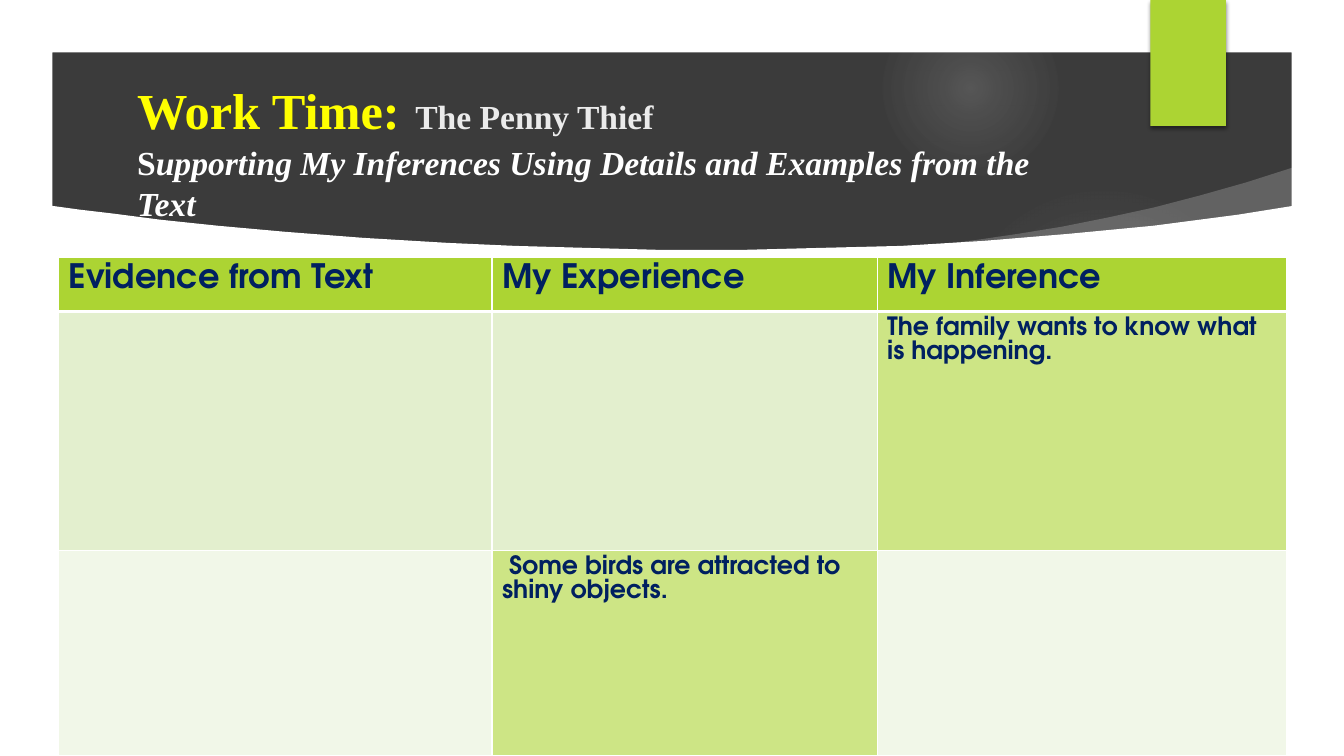
from dataclasses import dataclass

from pptx import Presentation
from pptx import util as u
from pptx.dml.color import RGBColor
from pptx.enum import shapes, text
from pptx.oxml import parse_xml
from pptx.oxml.ns import nsdecls, qn

NS = nsdecls("a")


@dataclass(frozen=True)
class Theme:
    dark: str = "3B3B3B"
    white: str = "FFFFFF"
    pale: str = "EBEBEB"
    glow: str = "F7F7F7"
    lime: str = "ACD433"
    light: str = "CDE585"
    odd: str = "E3EFCE"
    even: str = "F1F7E8"
    navy: str = "002060"
    yellow: str = "FFFF00"
    black: str = "000000"
    serif: str = "Times New Roman"
    sans: str = "TeX Gyre Adventor"
    big: int = 36
    gap: int = 44
    head: int = 24
    body: int = 18


T = Theme()
WIDE, HIGH = 13.33, 7.5

ARC = [(0.5, 2.04), (0.79, 2.08), (1.13, 2.12), (1.59, 2.18), (2.16, 2.24),
       (2.83, 2.3), (3.6, 2.36), (4.44, 2.41), (5.11, 2.44), (5.83, 2.46),
       (6.57, 2.48), (7.34, 2.48), (8.13, 2.46), (8.94, 2.44), (9.76, 2.39),
       (10.6, 2.32), (11.44, 2.24), (12.28, 2.13), (12.84, 2.04)]
SWOOSH = [(9.34, 2.5), (10.5, 2.45), (11.7, 2.31), (12.89, 2.14),
          (12.83, 1.66), (12.36, 1.81), (11.9, 1.94), (11.44, 2.06),
          (10.98, 2.16), (10.53, 2.25), (10.1, 2.32), (9.69, 2.38), (9.3, 2.43)]
OUTER = [(0, 0), (0, HIGH), (WIDE, HIGH), (WIDE, 0)]
INNER = [(12.81, 6.98), (12.81, 0.52), (0.52, 0.52), (0.52, 6.98)]


def write(para, words, size=T.head, font=T.serif, color=T.white,
          bold=True, italic=False):
    run = para.add_run()
    run.text = words
    face = run.font
    face.size, face.name = u.Pt(size), font
    face.bold, face.italic = bold, italic
    face.color.rgb = RGBColor.from_string(color)


class Board:
    """Holds the theme and the slide being drawn."""

    def __init__(self, slide, theme):
        self.slide, self.theme = slide, theme
        self.paint(slide.background.fill, theme.dark)

    def paint(self, fill, color):
        fill.solid()
        fill.fore_color.rgb = RGBColor.from_string(color)

    def plain(self, shape, color):
        shape.shadow.inherit = False
        shape.line.fill.background()
        self.paint(shape.fill, color)
        return shape

    def block(self, kind, box, color):
        shape = self.slide.shapes.add_shape(kind, *map(u.Inches, box))
        return self.plain(shape, color)

    def glow(self, box, stops):
        """Draw a disc that fades outwards; stops are (position, opacity)."""
        disc = self.block(shapes.MSO_SHAPE.OVAL, box, self.theme.glow)
        marks = "".join(
            f'<a:gs pos="{pos * 1000}"><a:srgbClr val="{self.theme.glow}">'
            f'<a:alpha val="{alpha * 1000}"/></a:srgbClr></a:gs>'
            for pos, alpha in stops)
        props = disc.element.spPr
        props.replace(props.find(qn("a:solidFill")), parse_xml(
            f'<a:gradFill {NS}><a:gsLst>{marks}</a:gsLst><a:path path="circle">'
            '<a:fillToRect l="50000" t="50000" r="50000" b="50000"/>'
            '</a:path></a:gradFill>'))

    def area(self, *rings, alpha=100):
        """Draw a white outline; a second ring cuts a hole."""
        first, *holes = [[(u.Inches(x), u.Inches(y)) for x, y in ring]
                         for ring in rings]
        pen = self.slide.shapes.build_freeform(*first[0])
        pen.add_line_segments(first[1:])
        for ring in holes:
            pen.move_to(*ring[0])
            pen.add_line_segments(ring[1:])
        shape = self.plain(pen.convert_to_shape(), self.theme.white)
        if alpha < 100:
            tone = shape.element.spPr.find(qn("a:solidFill"))[0]
            tone.append(parse_xml(f'<a:alpha {NS} val="{alpha * 1000}"/>'))

    def tab(self, box):
        shape = self.block(shapes.MSO_SHAPE.RECTANGLE, box, self.theme.lime)
        shape.element.spPr.find(qn("a:effectLst")).append(parse_xml(
            f'<a:outerShdw {NS} blurRad="{u.Pt(3)}" dist="{u.Pt(2)}" '
            'dir="5400000" rotWithShape="0"><a:srgbClr '
            f'val="{self.theme.black}"><a:alpha val="45000"/></a:srgbClr>'
            '</a:outerShdw>'))

    def title(self, box, lines):
        shape = self.slide.shapes.title
        shape.element.getparent().append(shape.element)
        shape.left, shape.top, shape.width, shape.height = map(u.Inches, box)
        frame = shape.text_frame
        frame.word_wrap = True
        frame.auto_size = text.MSO_AUTO_SIZE.NONE
        frame.vertical_anchor = text.MSO_ANCHOR.MIDDLE
        para = frame.paragraphs[0]
        para.alignment = text.PP_ALIGN.LEFT
        for row, line in enumerate(lines):
            if row:
                para.add_line_break()
            for words, form in line:
                write(para, words, **form)

    def edge(self, cell, row):
        props = cell._tc.get_or_add_tcPr()
        for spot, side in enumerate("LRTB"):
            wide = 3 if (row, side) in ((0, "B"), (1, "T")) else 1
            props.insert(spot, parse_xml(
                f'<a:ln{side} {NS} w="{u.Pt(wide)}"><a:solidFill><a:srgbClr '
                f'val="{self.theme.white}"/></a:solidFill></a:ln{side}>'))

    def table(self, box, cols, rows, cells):
        """Fill a grid from rows of (fill, runs) pairs."""
        grid = self.slide.shapes.add_table(
            len(rows), len(cols), *map(u.Inches, box)).table
        for col, wide in zip(grid.columns, cols):
            col.width = u.Inches(wide)
        for row, (line, tall) in enumerate(zip(cells, rows)):
            grid.rows[row].height = u.Inches(tall)
            size, lead = ((self.theme.body, 17) if row
                          else (self.theme.head, 23))
            for col, (color, runs) in enumerate(line):
                cell = grid.cell(row, col)
                self.paint(cell.fill, color)
                self.edge(cell, row)
                para = cell.text_frame.paragraphs[0]
                para.line_spacing = u.Pt(lead)
                for words, form in runs:
                    write(para, words, **{"size": size, "font": self.theme.sans,
                                          "color": self.theme.navy, **form})


def main():
    deck = Presentation()
    deck.slide_width, deck.slide_height = u.Inches(WIDE), u.Inches(HIGH)
    board = Board(deck.slides.add_slide(deck.slide_layouts[5]), T)

    board.glow((9.41, 1.83, 3.08, 3.08), [(0, 7), (36, 6), (69, 0)])
    board.glow((8.75, 0, 1.75, 1.75), [(0, 14), (36, 7), (73, 0)])
    board.area(SWOOSH, alpha=20)
    board.area(ARC + [(12.84, 7), (0.5, 7)])
    board.area(OUTER, INNER)
    board.tab((11.41, 0, 0.75, 1.25))

    board.title((1.26, 1.06, 9.58, 0.77), [
        [("Work Time:", {"size": T.big, "color": T.yellow}),
         (" ", {"size": T.gap, "color": T.pale}),
         ("The Penny Thief", {"color": T.pale})],
        [("S", {}),
         ("upporting My Inferences Using Details and Examples from the Text",
          {"italic": True})]])

    heads = ("Evidence from Text", "My Experience", "My Inference")
    board.table((0.58, 2.55, 12.17, 4.95), (4.3, 3.82, 4.06), (0.54, 2.37, 2.04), [
        [(T.lime, [(head, {})]) for head in heads],
        [(T.odd, []), (T.odd, []),
         (T.light, [("The family wants to know what is happening.", {})])],
        [(T.even, []),
         (T.light, [(" ", {"color": T.black, "bold": False}),
                    ("Some birds are attracted to shiny objects.", {})]),
         (T.even, [])]])
    deck.save("out.pptx")


if __name__ == "__main__":
    main()
